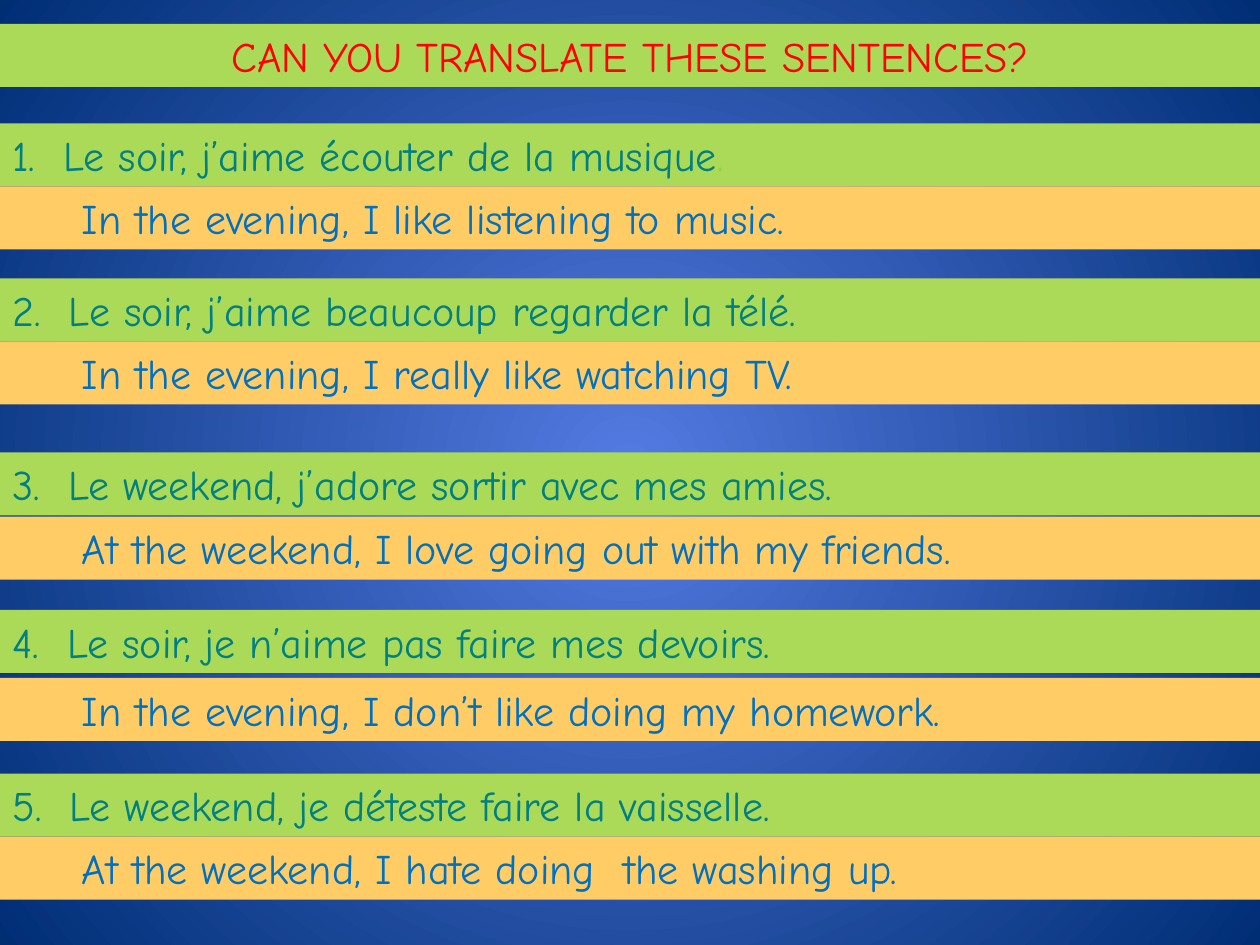
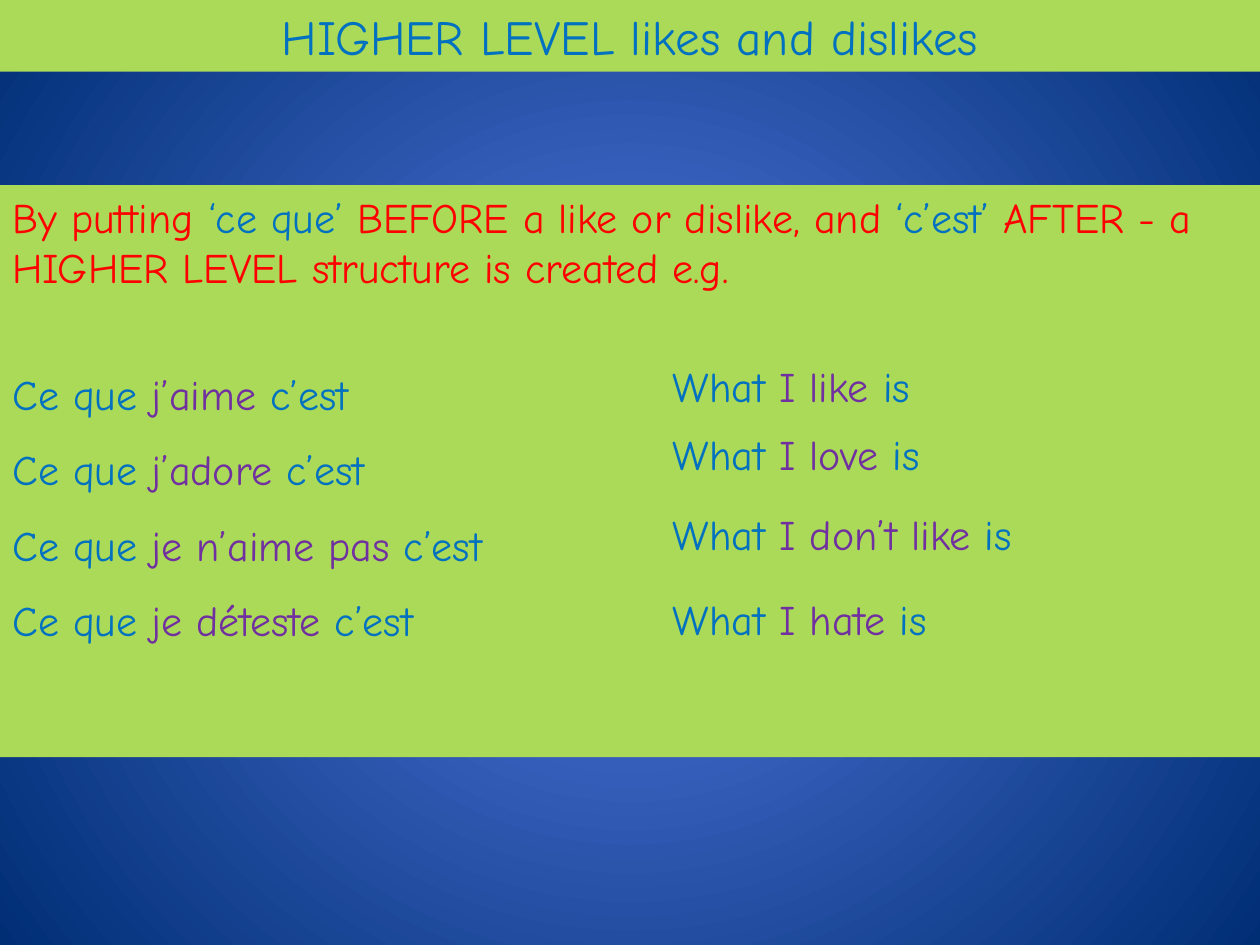
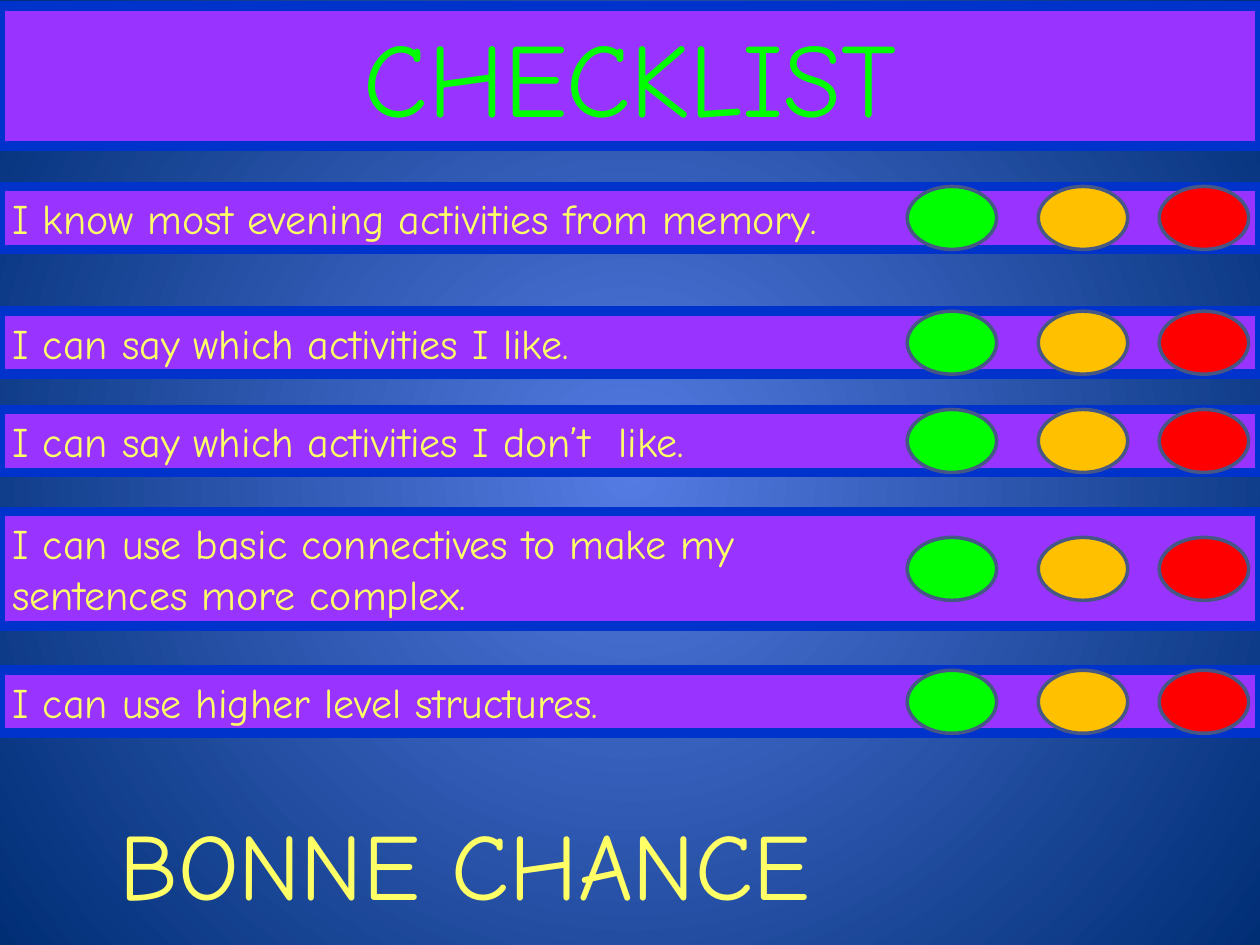
from pptx import Presentation
from pptx.dml.color import RGBColor
from pptx.enum.shapes import MSO_SHAPE as Preset
from pptx.enum.text import MSO_ANCHOR as Anchor, PP_ALIGN as Align
from pptx.oxml import parse_xml
from pptx.oxml.ns import nsdecls
from pptx.util import Inches, Pt

WIDTH, HEIGHT = Inches(10), Inches(7.5)
COL, ROW = WIDTH // 100, HEIGHT // 75
FULL = 100
BAND_ROWS = 5

FONT = "Comic Neue"
GREEN, SAND, VIOLET = "ABD958", "FFCC66", "9933FF"
RED, TEAL, BLUE, PURPLE = "FF0000", "008080", "0070C0", "7030A0"
LIME, AMBER, LEMON = "00FF00", "FFC000", "FFFF66"
FRAME, RIM = ("0033CC", 5.5), ("475785", 2)
GLOW, NIGHT = "547BE2", "002E75"

# Question row, answer row, French, English
SENTENCES = [
    (9.8, 14.8, "1.  Le soir, j’aime écouter de la musique",
     "In the evening, I like listening to music."),
    (22.1, 27.1, "2.  Le soir, j’aime beaucoup regarder la télé.",
     "In the evening, I really like watching TV."),
    (35.9, 41, "3.  Le weekend, j’adore sortir avec mes amies.",
     "At the weekend, I love going out with my friends."),
    (48.4, 53.8, "4.  Le soir, je n’aime pas faire mes devoirs.",
     "In the evening, I don’t like doing my homework."),
    (61.4, 66.4, "5.  Le weekend, je déteste faire la vaisselle.",
     "At the weekend, I hate doing  the washing up."),
]

# Row of the English phrase, French opinion, English opinion
OPINIONS = [
    (28.1, "j’aime ", "I like "),
    (33.5, "j’adore ", "I love "),
    (39.9, "je n’aime pas ", "I don’t like "),
    (46.6, "je déteste ", "I hate "),
]

# Top row, height in rows, lines of the statement
SKILLS = [
    (14.8, BAND_ROWS, ["I know most evening activities from memory."]),
    (24.7, BAND_ROWS, ["I can say which activities I like."]),
    (32.5, BAND_ROWS, ["I can say which activities I don’t  like."]),
    (40.6, 9.1, ["I can use basic connectives to make my",
                 "sentences more complex."]),
    (53.2, BAND_ROWS, ["I can use higher level structures."]),
]
LIGHTS = [(72, LIME), (82.4, AMBER), (92, RED)]


def rgb(color):
    return RGBColor.from_string(color)


def grid(left, top, width, height):
    return [int(n) for n in (left * COL, top * ROW, width * COL, height * ROW)]


def paint_background(master):
    """Give every slide a glow that spreads from the centre."""
    fill = master.background.fill
    fill.gradient()
    for stop, color in zip(fill.gradient_stops, (GLOW, NIGHT)):
        stop.color.rgb = rgb(color)
    gradient = master.element.xpath("./p:cSld/p:bg//a:gradFill")[0]
    for linear in gradient.xpath("./a:lin"):
        gradient.remove(linear)
    gradient.append(parse_xml(
        f'<a:path {nsdecls("a")} path="circle">'
        '<a:fillToRect l="50000" t="50000" r="50000" b="50000"/></a:path>'))


def write(holder, lines, size=24, align=Align.LEFT):
    """Fill a shape with lines, each a list of (text, colour) pieces."""
    frame = holder.text_frame
    frame.word_wrap = True
    frame.vertical_anchor = Anchor.TOP
    for number, pieces in enumerate(lines):
        line = frame.add_paragraph() if number else frame.paragraphs[0]
        line.alignment = align
        line.font.name = FONT
        line.font.size = Pt(size)
        main_color = pieces[0][1]
        line.font.color.rgb = rgb(main_color)
        for text, color in pieces:
            run = line.add_run()
            run.text = text
            if color != main_color:
                run.font.color.rgb = rgb(color)
    return frame


def add_preset(slide, preset, place, color, outline=None):
    shape = slide.shapes.add_shape(preset, *grid(*place))
    shape.shadow.inherit = False
    shape.fill.solid()
    shape.fill.fore_color.rgb = rgb(color)
    if outline:
        line_color, points = outline
        shape.line.color.rgb = rgb(line_color)
        shape.line.width = Pt(points)
    else:
        shape.line.fill.background()
    return shape


def add_band(slide, top, height, color, lines, outline=None, **style):
    """Add a full-width strip of text."""
    band = add_preset(slide, Preset.RECTANGLE, (0, top, FULL, height),
                      color, outline)
    return write(band, lines, **style)


def add_label(slide, place, lines, **style):
    return write(slide.shapes.add_textbox(*grid(*place)), lines, **style)


def build_translation(slide):
    add_band(slide, 1.9, BAND_ROWS, GREEN,
             [[("CAN YOU TRANSLATE THESE SENTENCES?", RED)]],
             align=Align.CENTER)
    for question_row, answer_row, french, english in SENTENCES:
        question = [(french, TEAL)]
        if not french.endswith("."):
            question.append((".", "92D050"))
        add_band(slide, question_row, BAND_ROWS, GREEN, [question])
        answer = add_band(slide, answer_row, BAND_ROWS, SAND,
                          [[(english, BLUE)]])
        answer.margin_left = Inches(0.65)


def build_higher_level(slide):
    rule = [("By putting ", RED), ("‘ce que’ ", BLUE),
            ("BEFORE a like or dislike, and ", RED), ("‘c’est’", BLUE),
            (" AFTER - a HIGHER LEVEL structure is created e.g.", RED)]
    examples = [[("Ce que ", BLUE), (french, PURPLE), ("c’est", BLUE)]
                for _, french, _ in OPINIONS]
    panel = add_band(slide, 14.7, 45.4, GREEN, [rule] + examples)
    for example in panel.paragraphs[1:]:
        example.line_spacing = 1.5
    panel.paragraphs[1].space_before = Pt(29)
    add_band(slide, 0, 5.7, GREEN,
             [[("HIGHER LEVEL likes and dislikes", BLUE)]],
             size=28, align=Align.CENTER)
    for row, _, english in OPINIONS:
        add_label(slide, (52.4, row, 37.1, BAND_ROWS),
                  [[("What ", BLUE), (english, PURPLE), ("is", BLUE)]])


def build_checklist(slide):
    add_band(slide, 0.5, 11.1, VIOLET, [[("CHECKLIST", LIME)]], FRAME,
             size=60, align=Align.CENTER)
    for top, height, statement in SKILLS:
        add_band(slide, top, height, VIOLET,
                 [[(text, LEMON)] for text in statement], FRAME)
        light_row = top + (height - BAND_ROWS) / 2
        for column, color in LIGHTS:
            add_preset(slide, Preset.OVAL, (column, light_row, 7.1, BAND_ROWS),
                       color, RIM)
    add_label(slide, (8.5, 63.5, 67.7, 10.1), [[("BONNE CHANCE", LEMON)]],
              size=54)


def main():
    deck = Presentation()
    deck.slide_width, deck.slide_height = WIDTH, HEIGHT
    paint_background(deck.slide_master)
    blank = deck.slide_layouts[6]
    for build in (build_translation, build_higher_level, build_checklist):
        build(deck.slides.add_slide(blank))
    deck.save("out.pptx")


if __name__ == "__main__":
    main()
